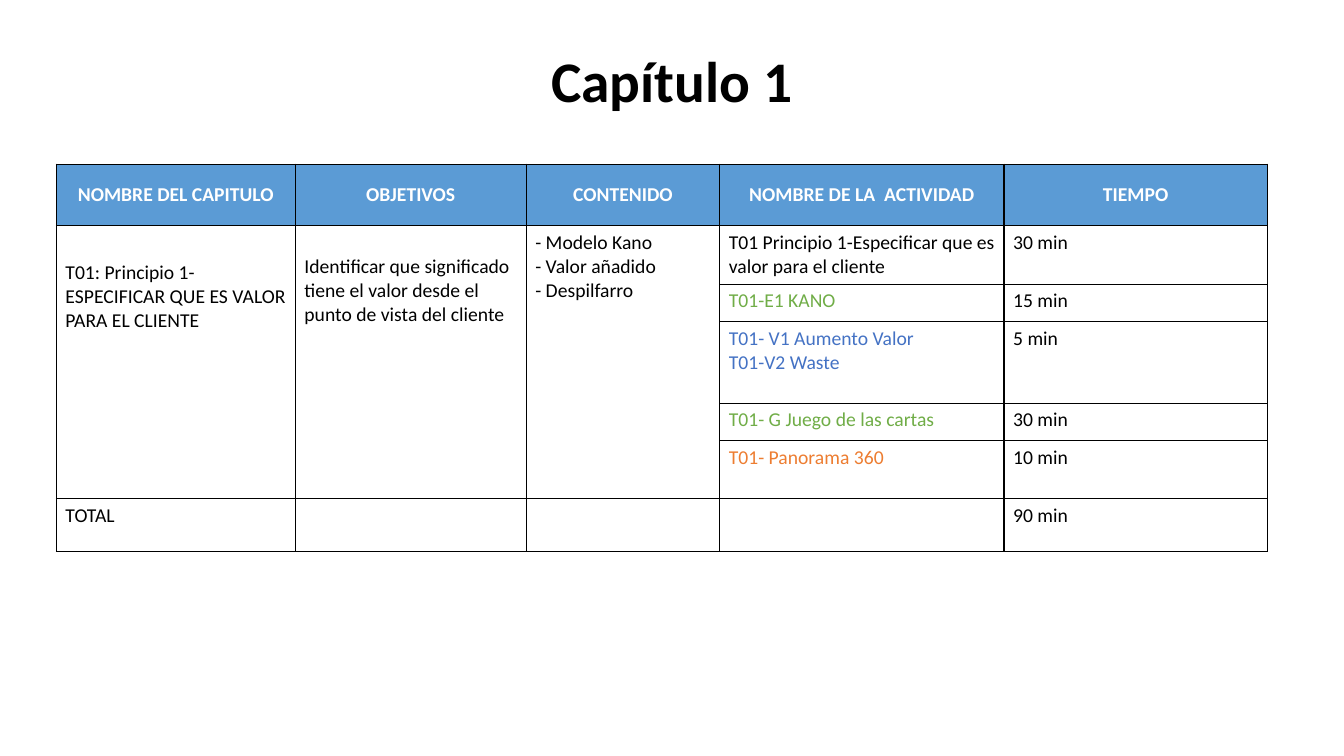
import pptx
import pptx.dml.color
import pptx.enum.text
import pptx.oxml
import pptx.oxml.ns
import pptx.util

Inches, Pt = pptx.util.Inches, pptx.util.Pt
RGBColor = pptx.dml.color.RGBColor
PP_ALIGN, MSO_ANCHOR = pptx.enum.text.PP_ALIGN, pptx.enum.text.MSO_ANCHOR

BLACK = RGBColor(0x00, 0x00, 0x00)
WHITE = RGBColor(0xFF, 0xFF, 0xFF)
HEADER_BLUE = RGBColor(0x5B, 0x9B, 0xD5)
GREEN = RGBColor(0x70, 0xAD, 0x47)
BLUE = RGBColor(0x44, 0x72, 0xC4)
ORANGE = RGBColor(0xED, 0x7D, 0x31)

TITLE = "Capítulo 1"
HEADERS = ["NOMBRE DEL CAPITULO", "OBJETIVOS", "CONTENIDO", "NOMBRE DE LA  ACTIVIDAD", "TIEMPO"]
# Text and top margin in inches of the cells that span all activities
CHAPTER = [
    ("T01: Principio 1- ESPECIFICAR QUE ES VALOR PARA EL CLIENTE", 0.35),
    ("Identificar que significado tiene el valor desde el punto de vista del cliente", 0.29),
    ("- Modelo Kano\n- Valor añadido\n- Despilfarro", 0.05),
]
ACTIVITIES = [
    ("T01 Principio 1-Especificar que es valor para el cliente", BLACK, "30 min"),
    ("T01-E1 KANO", GREEN, "15 min"),
    ("T01- V1 Aumento Valor\nT01-V2 Waste", BLUE, "5 min"),
    ("T01- G Juego de las cartas", GREEN, "30 min"),
    ("T01- Panorama 360", ORANGE, "10 min"),
]
TOTAL = ["TOTAL", "", "", "", "90 min"]

SLIDE_SIZE = (13.33, 7.5)
TABLE_CORNER = (0.56, 1.63)
COLUMN_WIDTHS = [2.37, 2.29, 1.92, 2.82, 2.61]
ROW_HEIGHTS = [0.61, 0.58, 0.37, 0.81, 0.37, 0.58, 0.52]
CELL_MARGINS = {"margin_left": 0.09, "margin_right": 0.09, "margin_top": 0.05, "margin_bottom": 0.05}
BORDER = (
    '<a:{side} {namespace} w="12700"><a:solidFill><a:srgbClr val="{color}"/>'
    "</a:solidFill></a:{side}>"
)


def set_attributes(target, values):
    for name, value in values.items():
        setattr(target, name, value)


def format_paragraph(paragraph, size, color, bold, alignment):
    paragraph.alignment = alignment
    for run in paragraph.runs:
        set_attributes(run.font, {"name": "Calibri", "size": Pt(size), "bold": bold})
        run.font.color.rgb = color


def write_cell(cell, text, color=BLACK, bold=False, alignment=PP_ALIGN.LEFT):
    cell.text = text
    for paragraph in cell.text_frame.paragraphs:
        format_paragraph(paragraph, 14, color, bold, alignment)


def style_cell(cell, fill_color):
    """Set the margins, fill and four borders of a cell."""
    set_attributes(cell, {name: Inches(value) for name, value in CELL_MARGINS.items()})
    cell.fill.solid()
    cell.fill.fore_color.rgb = fill_color
    properties = cell._tc.get_or_add_tcPr()
    for position, side in enumerate(("lnL", "lnR", "lnT", "lnB")):
        line = BORDER.format(side=side, namespace=pptx.oxml.ns.nsdecls("a"), color=BLACK)
        properties.insert(position, pptx.oxml.parse_xml(line))


def add_title(slide):
    title = slide.shapes.title
    set_attributes(title, {"left": 0, "top": Inches(0.48),
                           "width": Inches(SLIDE_SIZE[0]), "height": Inches(1.31)})
    frame = title.text_frame
    frame.text = TITLE
    set_attributes(frame, {"vertical_anchor": MSO_ANCHOR.TOP, "word_wrap": True,
                           "auto_size": pptx.enum.text.MSO_AUTO_SIZE.NONE})
    frame.paragraphs[0].line_spacing = 0.9
    format_paragraph(frame.paragraphs[0], 41, BLACK, True, PP_ALIGN.CENTER)


def add_chapter_table(slide):
    left, top = TABLE_CORNER
    table = slide.shapes.add_table(
        len(ROW_HEIGHTS), len(COLUMN_WIDTHS), Inches(left), Inches(top),
        Inches(sum(COLUMN_WIDTHS)), Inches(sum(ROW_HEIGHTS))).table
    for column, width in zip(table.columns, COLUMN_WIDTHS):
        column.width = Inches(width)
    for index, (row, height) in enumerate(zip(table.rows, ROW_HEIGHTS)):
        row.height = Inches(height)
        for cell in row.cells:
            style_cell(cell, WHITE if index else HEADER_BLUE)

    for column, header in enumerate(HEADERS):
        cell = table.cell(0, column)
        write_cell(cell, header, WHITE, True, PP_ALIGN.CENTER)
        cell.vertical_anchor = MSO_ANCHOR.MIDDLE
    for column, (text, margin_top) in enumerate(CHAPTER):
        cell = table.cell(1, column)
        cell.merge(table.cell(len(ACTIVITIES), column))
        write_cell(cell, text)
        cell.margin_top = Inches(margin_top)
    for row, (activity, color, time) in enumerate(ACTIVITIES, start=1):
        write_cell(table.cell(row, 3), activity, color)
        write_cell(table.cell(row, 4), time)
    for column, text in enumerate(TOTAL):
        write_cell(table.cell(len(ROW_HEIGHTS) - 1, column), text)


def main():
    presentation = pptx.Presentation()
    presentation.slide_width, presentation.slide_height = map(Inches, SLIDE_SIZE)
    slide = presentation.slides.add_slide(presentation.slide_layouts[5])
    add_chapter_table(slide)
    add_title(slide)
    presentation.save("out.pptx")


if __name__ == "__main__":
    main()
